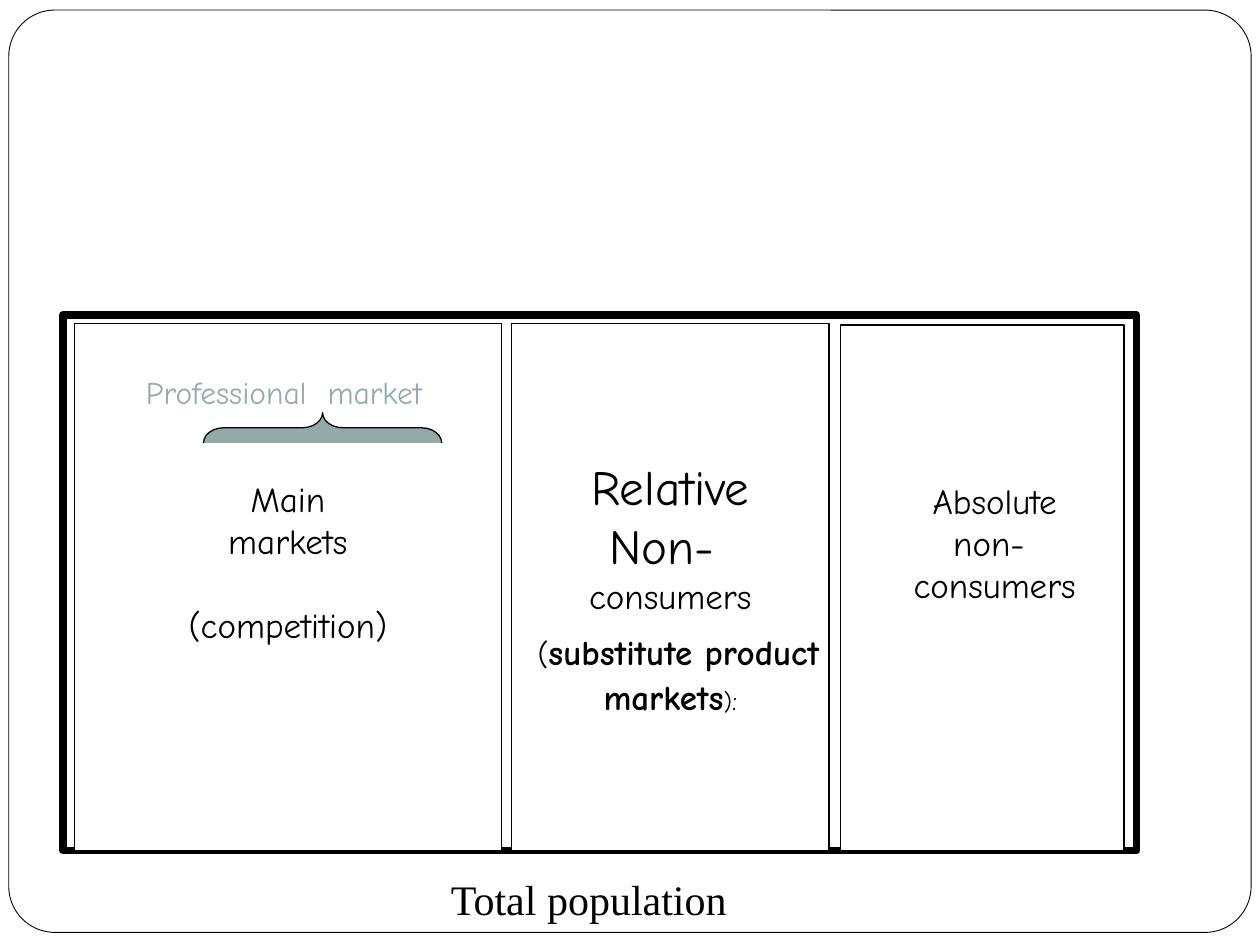
from pptx import Presentation
from pptx.dml.color import RGBColor
from pptx.enum import shapes, text
from pptx.util import Inches, Pt

BLACK, WHITE, GREY = "000000", "FFFFFF", "96A9A9"
HAND, SERIF = "Comic Neue", "Times New Roman"


def color(hex_value):
    return RGBColor.from_string(hex_value)


def add_outline(slide, kind, box, fill=WHITE, weight=0.75, adjustments=()):
    shape = slide.shapes.add_shape(kind, *map(Inches, box))
    shape.shadow.inherit = False
    shape.fill.solid()
    shape.fill.fore_color.rgb = color(fill)
    shape.line.color.rgb = color(BLACK)
    shape.line.width = Pt(weight)
    for index, value in enumerate(adjustments):
        shape.adjustments[index] = value
    return shape


def style(run, size, font=HAND, hex_value=BLACK, bold=False):
    run.font.size = Pt(size)
    run.font.name = font
    run.font.bold = bold
    run.font.color.rgb = color(hex_value)


def write(frame, paragraphs, align=text.PP_ALIGN.CENTER, font=HAND, hex_value=BLACK):
    """Each paragraph is a list of (wording, size) or (wording, size, bold)."""
    frame.word_wrap = False
    for index, pieces in enumerate(paragraphs):
        paragraph = frame.paragraphs[0] if index == 0 else frame.add_paragraph()
        paragraph.alignment = align
        for wording, size, *bold in pieces:
            for number, line in enumerate(wording.split("\n")):
                if number:
                    paragraph.add_line_break()
                run = paragraph.add_run()
                run.text = line
                style(run, size, font, hex_value, bool(bold))


def add_label(slide, box, paragraphs, **options):
    label = slide.shapes.add_textbox(*map(Inches, box))
    write(label.text_frame, paragraphs, **options)
    label.text_frame.auto_size = text.MSO_AUTO_SIZE.SHAPE_TO_FIT_TEXT


def add_segment(slide, box, paragraphs):
    segment = add_outline(slide, shapes.MSO_SHAPE.RECTANGLE, box)
    frame = segment.text_frame
    frame.vertical_anchor = text.MSO_ANCHOR.MIDDLE
    write(frame, paragraphs)
    return frame


def main():
    prs = Presentation()
    prs.slide_width, prs.slide_height = Inches(10), Inches(7.5)
    slide = prs.slides.add_slide(prs.slide_layouts[6])
    left = text.PP_ALIGN.LEFT

    # Slide border and total population
    add_outline(slide, shapes.MSO_SHAPE.ROUNDED_RECTANGLE,
                (0.07, 0.08, 9.86, 7.32), weight=0.5, adjustments=[0.05])
    add_outline(slide, shapes.MSO_SHAPE.RECTANGLE, (0.5, 2.5, 8.52, 4.25), weight=4.5)
    add_label(slide, (3.48, 6.88, 2.41, 0.5), [[("Total population", 24)]],
              align=left, font=SERIF)

    # Absolute non-consumers
    add_segment(slide, (6.67, 2.58, 2.25, 4.17), [])
    add_label(slide, (7.11, 3.76, 1.57, 1.11),
              [[("Absolute\nnon- ", 20)], [("consumers", 20)]])

    # Relative non-consumers
    add_segment(slide, (4.06, 2.57, 2.52, 4.18), [
        [("Relative\nNon- ", 28)],
        [("consumers", 20)],
        [(" ", 28), ("(", 18), ("substitute product\nmarkets", 20, True),
         (")", 14), (":", 16)],
    ])

    # Main markets, set a little above the middle
    main_markets = add_segment(slide, (0.59, 2.57, 3.39, 4.18), [
        [("Main\nmarkets", 20)], [("(competition)", 20)],
    ])
    main_markets.paragraphs[1].space_before = Pt(24)
    main_markets.margin_bottom = Inches(0.45)

    # Professional market and its brace
    brace = add_outline(slide, shapes.MSO_SHAPE.LEFT_BRACE, (2.44, 2.45, 0.24, 1.89),
                        fill=GREY, adjustments=[0.67, 0.5])
    brace.rotation = 90
    add_label(slide, (1.06, 2.91, 2.62, 0.4), [[("Professional  market", 18)]],
              align=left, hex_value=GREY)

    prs.save("out.pptx")


if __name__ == "__main__":
    main()
